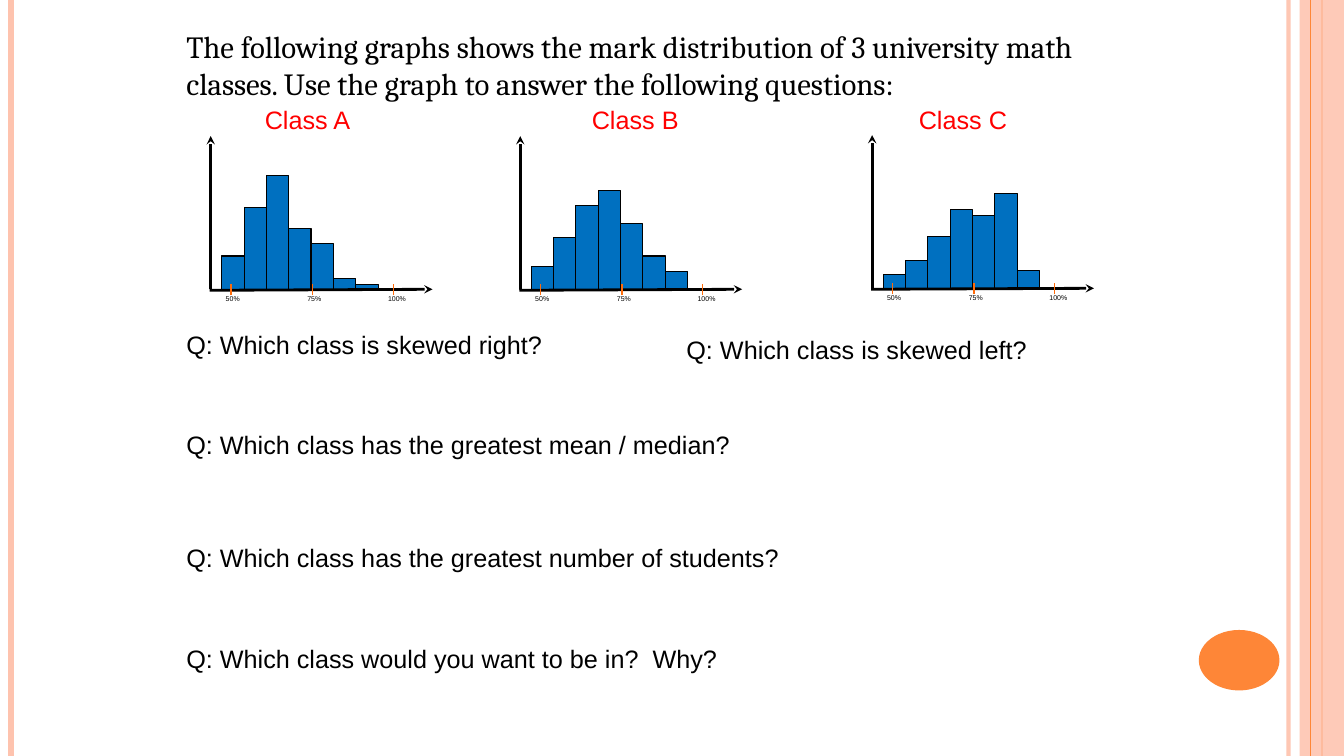
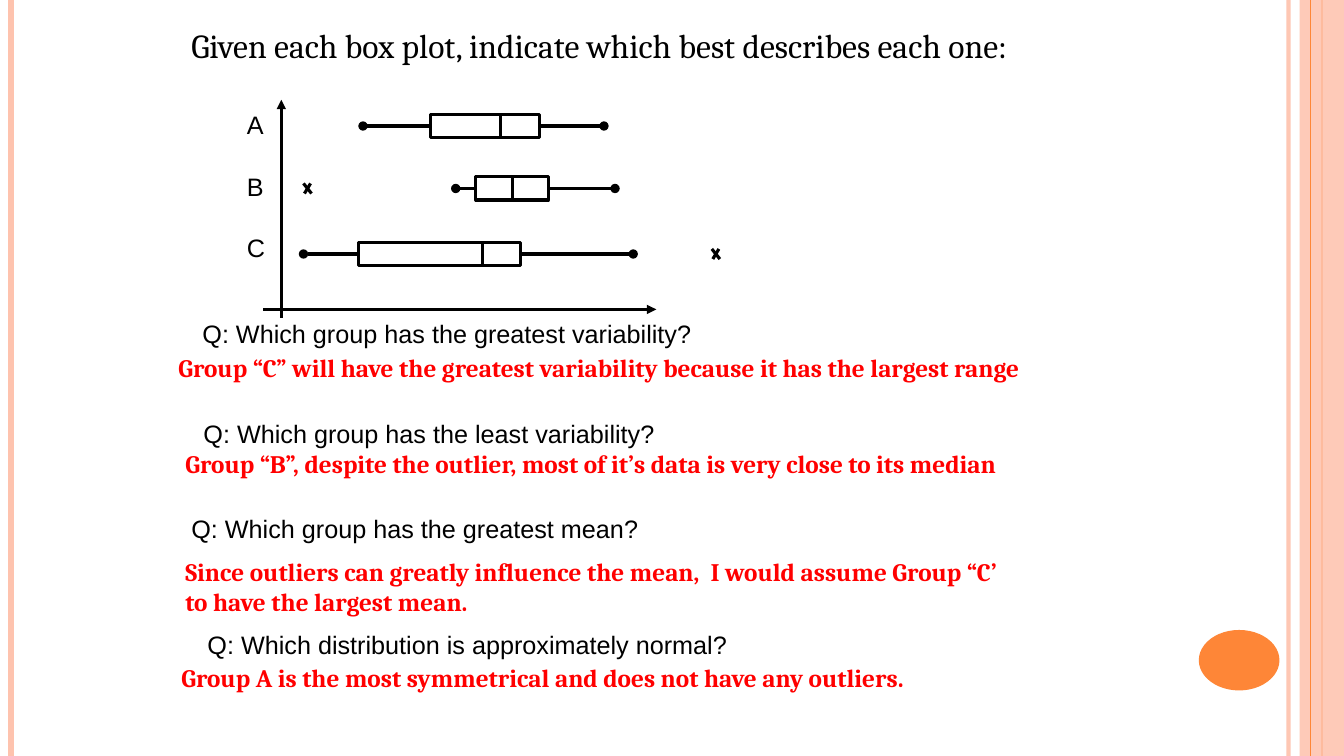
from lxml.etree import SubElement
from pptx import Presentation
from pptx.dml.color import RGBColor
from pptx.enum.shapes import MSO_CONNECTOR, MSO_SHAPE
from pptx.enum.text import PP_ALIGN
from pptx.oxml.ns import qn
from pptx.util import Inches, Pt

BLACK = RGBColor(0x00, 0x00, 0x00)
RED = RGBColor(0xFF, 0x00, 0x00)
BLUE = RGBColor(0x00, 0x70, 0xC0)
PEACH = RGBColor(0xFE, 0xC3, 0xAE)
ORANGE = RGBColor(0xFE, 0x86, 0x37)
TICK_ORANGE = RGBColor(0xFF, 0x6B, 0x0A)

WIDTH, HEIGHT = 13.33, 7.5
TEXT_HEIGHT = 0.4

# x, colour, line width, opacity in percent
RULES_BELOW_BAND = [(12.78, PEACH, 3, 93), (0.11, PEACH, 4.5, 100), (13.11, ORANGE, 1.5, 100)]
RULES_ABOVE_BAND = [(13, ORANGE, 0.75, 100)]

HISTOGRAM_TITLE = (
    "The following graphs shows the mark distribution of 3 university math classes. "
    "Use the graph to answer the following questions:"
)
# name, title left, origin x, baseline y, bar heights
HISTOGRAMS = [
    ("Class A", 2.34, 2.09, 2.87, [0.33, 0.81, 1.13, 0.6, 0.45, 0.11, 0.05]),
    ("Class B", 5.59, 5.16, 2.87, [0.23, 0.51, 0.83, 0.98, 0.65, 0.33, 0.18]),
    ("Class C", 8.84, 8.65, 2.86, [0.14, 0.28, 0.51, 0.78, 0.72, 0.94, 0.18]),
]
BARS_OFFSET, BARS_WIDTH = 0.11, 1.55
# label, offset from the origin, label width
MARK_TICKS = [("50%", 0.2, 0.35), ("75%", 1.01, 0.35), ("100%", 1.81, 0.41)]
CLASS_QUESTIONS = [
    ("Q: Which class is skewed right?", 1.75, 3.22, 3.84),
    ("Q: Which class is skewed left?", 6.71, 3.27, 3.6),
    ("Q: Which class has the greatest mean / median?", 1.75, 4.21, 6.33),
    ("Q: Which class has the greatest number of students?", 1.75, 5.33, 6.33),
    ("Q: Which class would you want to be in?  Why?", 1.75, 6.33, 6.33),
]

BOX_PLOT_TITLE = "Given each box plot, indicate which best describes each one:"
# group, centre y, (low, quartile 1, median, quartile 3, high), outlier x
BOX_PLOTS = [
    ("A", 1.25, (3.6, 4.27, 4.96, 5.35, 5.99), None),
    ("B", 1.87, (4.52, 4.72, 5.08, 5.44, 6.1), 3.05),
    ("C", 2.52, (3.01, 3.56, 4.79, 5.16, 6.28), 7.1),
]
BOX_HEIGHT = 0.23
GROUP_TOP, GROUP_STEP = 1.04, 0.61
GROUP_QUESTIONS = [
    ("Q: Which group has the greatest variability?", 1.91, 3.11),
    ("Q: Which group has the least variability?", 1.92, 4.1),
    ("Q: Which group has the greatest mean?", 1.8, 5.04),
    ("Q: Which distribution is approximately normal?", 1.96, 6.19),
]
GROUP_ANSWERS = [
    ("Group “C” will have the greatest variability because it has the largest range", 1.67, 3.45),
    ("Group “B”, despite the outlier, most of it’s data is very close to its median", 1.74, 4.4),
    (
        "Since outliers can greatly influence the mean,  I would assume Group “C’\v"
        "to have the largest mean.", 1.74, 5.47,
    ),
    ("Group A is the most symmetrical and does not have any outliers.", 1.7, 6.52),
]


def set_opacity(element, percent):
    """Make the first plain colour inside element partly see-through."""
    color = next(element.iter(qn("a:srgbClr")))
    SubElement(color, qn("a:alpha"), val=str(percent * 1000))


def add_line(slide, start, end, color=BLACK, width=2.25, tip=None, opacity=100):
    connector = slide.shapes.add_connector(
        MSO_CONNECTOR.STRAIGHT, *(Inches(value) for value in (*start, *end))
    )
    connector.line.color.rgb = color
    connector.line.width = Pt(width)
    properties = connector.element.spPr
    outline = properties.find(qn("a:ln"))
    if opacity < 100:
        set_opacity(outline, opacity)
    if tip:
        SubElement(outline, qn("a:tailEnd"), type=tip)
    SubElement(properties, qn("a:effectLst"))
    return connector


def add_preset(slide, preset, left, top, width, height, fill=None, line_width=0):
    shape = slide.shapes.add_shape(
        preset, *(Inches(value) for value in (left, top, width, height))
    )
    shape.shadow.inherit = False
    if fill is None:
        shape.fill.background()
    else:
        shape.fill.solid()
        shape.fill.fore_color.rgb = fill
    if line_width:
        shape.line.color.rgb = BLACK
        shape.line.width = Pt(line_width)
    else:
        shape.line.fill.background()
    return shape


def add_text(slide, text, left, top, width, height=TEXT_HEIGHT, size=18,
             font="Arial", color=BLACK, bold=False, align=PP_ALIGN.LEFT):
    box = slide.shapes.add_textbox(
        *(Inches(value) for value in (left, top, width, height))
    )
    box.text_frame.word_wrap = True
    para = box.text_frame.paragraphs[0]
    para.text = text
    para.alignment = align
    for span in para.runs:
        span.font.name = font
        span.font.size = Pt(size)
        span.font.bold = bold
        span.font.color.rgb = color


def add_title(slide, text, left, top, width, height, size):
    add_text(slide, text, left, top, width, height, size, font="Cambria")


def add_rules(slide, rules):
    return [
        add_line(slide, (x, 0), (x, HEIGHT), color, width, opacity=opacity)
        for x, color, width, opacity in rules
    ]


def decorate_layout(layout, slide):
    """Draw the side bands on a slide, then move them to the layout all slides share."""
    for placeholder in list(layout.placeholders):
        layout.shapes.element.remove(placeholder.element)
    parts = add_rules(slide, RULES_BELOW_BAND)
    band = add_preset(slide, MSO_SHAPE.RECTANGLE, 12.89, 0, 0.44, HEIGHT, PEACH)
    set_opacity(band.element.spPr, 87)
    parts.append(band)
    parts += add_rules(slide, RULES_ABOVE_BAND)
    parts.append(add_preset(slide, MSO_SHAPE.OVAL, 11.89, 6.25, 0.8, 0.6, ORANGE))
    for part in parts:
        layout.shapes.element.append(part.element)


def add_histogram(slide, name, title_left, origin, base, heights):
    add_text(slide, name, title_left, 0.99, 1.42, color=RED, align=PP_ALIGN.CENTER)
    add_line(slide, (origin, base), (origin, base - 1.52), width=2, tip="stealth")
    bar_width = BARS_WIDTH / len(heights)
    for index, height in enumerate(heights):
        left = origin + BARS_OFFSET + index * bar_width
        add_preset(slide, MSO_SHAPE.RECTANGLE, left, base - height,
                   bar_width, height, BLUE, 0.75)
    add_line(slide, (origin - 0.01, base + 0.01), (origin + 2.2, base), width=2, tip="stealth")
    for label, offset, width in MARK_TICKS:
        x = origin + offset
        add_line(slide, (x, base + 0.06), (x, base - 0.05), TICK_ORANGE, 1)
        add_text(slide, label, x - 0.15, base, width, 0.19, size=5)


def add_box_plot(slide, center, five_numbers, outlier):
    low, quartile_1, median, quartile_3, high = five_numbers
    top, bottom = center - BOX_HEIGHT / 2, center + BOX_HEIGHT / 2
    add_preset(slide, MSO_SHAPE.RECTANGLE, quartile_1, top,
               quartile_3 - quartile_1, BOX_HEIGHT, line_width=2.25)
    add_line(slide, (median, top), (median, bottom))
    for edge, end in ((quartile_1, low), (quartile_3, high)):
        add_line(slide, (edge, center), (end, center), tip="oval")
    if outlier is not None:
        for reach, rise in ((0.04, 0.05), (0.03, -0.05)):
            add_line(slide, (outlier - reach, center - rise), (outlier + reach, center + rise))


def build_histogram_slide(slide):
    add_title(slide, HISTOGRAM_TITLE, 1.75, 0.23, 9.54, 1.33, 22)
    for histogram in HISTOGRAMS:
        add_histogram(slide, *histogram)
    for question in CLASS_QUESTIONS:
        add_text(slide, *question)


def build_box_plot_slide(slide):
    add_title(slide, BOX_PLOT_TITLE, 1.8, 0.2, 9.47, 0.68, 24)
    add_line(slide, (2.61, 3.07), (6.51, 3.07), tip="triangle")
    add_line(slide, (2.79, 3.15), (2.79, 0.99), tip="triangle")
    for index, (group, center, five_numbers, outlier) in enumerate(BOX_PLOTS):
        add_text(slide, group, 2.35, GROUP_TOP + index * GROUP_STEP, 0.72)
        add_box_plot(slide, center, five_numbers, outlier)
    for text, left, top in GROUP_QUESTIONS:
        add_text(slide, text, left, top, 7.34)
    for text, left, top in GROUP_ANSWERS:
        add_text(slide, text, left, top, 9.8, font="Cambria", color=RED, bold=True)


def main():
    deck = Presentation()
    deck.slide_width, deck.slide_height = Inches(WIDTH), Inches(HEIGHT)
    blank = deck.slide_layouts[6]
    histogram_slide = deck.slides.add_slide(blank)
    decorate_layout(blank, histogram_slide)
    build_histogram_slide(histogram_slide)
    build_box_plot_slide(deck.slides.add_slide(blank))
    deck.save("out.pptx")


if __name__ == "__main__":
    main()
